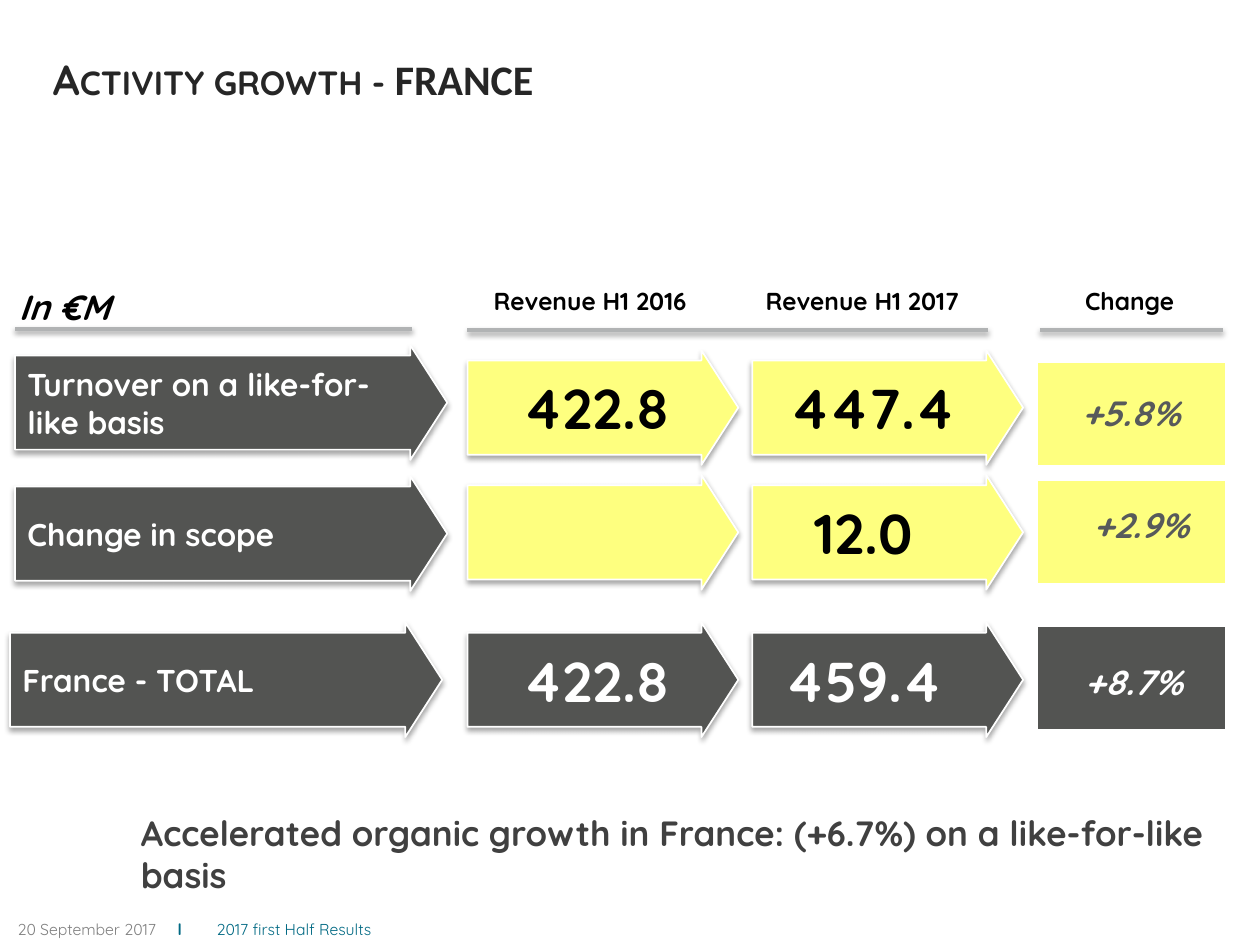
from dataclasses import dataclass

from lxml.etree import SubElement
from pptx import Presentation
from pptx.dml.color import RGBColor as Rgb
from pptx.enum.shapes import MSO_CONNECTOR as Link, MSO_SHAPE as Shape
from pptx.enum.text import MSO_ANCHOR as Anchor, PP_ALIGN as Align
from pptx.oxml.ns import qn
from pptx.util import Inches, Pt


@dataclass(frozen=True)
class Theme:
    """Colours, fonts and type sizes of the slide."""
    font: str = "Quicksand"
    alt: str = "Calibri"
    white: str = "FFFFFF"
    black: str = "000000"
    dark: str = "535452"
    yellow: str = "FEFF7F"
    rule: str = "B1B3B4"
    ink: str = "262626"
    body: str = "404040"
    rate: str = "575A5B"
    grey: str = "808080"
    teal: str = "006983"
    title: int = 24
    figure: int = 32
    large: int = 20
    label: int = 18
    head: int = 14
    foot: int = 9


T = Theme()
COLS = (3.71, 5.97)
ARROW_H = 0.91


def style(run, size, color, bold=True, italic=False, font=T.font):
    """Format one run."""
    face = run.font
    face.name, face.size = font, Pt(size)
    face.bold, face.italic = bold, italic
    face.color.rgb = Rgb.from_string(color)


def write(frame, text, size, color, align=Align.LEFT, italic=False):
    """Put one styled paragraph in a frame."""
    frame.word_wrap = True
    para = frame.paragraphs[0]
    para.text, para.alignment = text, align
    style(para.runs[0], size, color, italic=italic)


def label(slide, box, text, size, color, align=Align.CENTER, italic=False):
    """Add a text box."""
    shape = slide.shapes.add_textbox(*map(Inches, box))
    write(shape.text_frame, text, size, color, align, italic)


def shade(shape, alpha, dist):
    """Give a shape or line a soft shadow below it."""
    props = shape._element.spPr
    for old in props.findall(qn("a:effectLst")):
        props.remove(old)
    glow = SubElement(SubElement(props, qn("a:effectLst")), qn("a:outerShdw"),
                      blurRad=str(Pt(3.1)), dist=str(Pt(dist)),
                      dir="5400000", rotWithShape="0")
    tint = SubElement(glow, qn("a:srgbClr"), val=T.black)
    SubElement(tint, qn("a:alpha"), val=str(alpha * 1000))


def block(slide, kind, box, fill, width):
    """Add a filled shape with a white outline."""
    shape = slide.shapes.add_shape(kind, *map(Inches, box))
    shape.shadow.inherit = False
    shape.fill.solid()
    shape.fill.fore_color.rgb = Rgb.from_string(fill)
    shape.line.color.rgb = Rgb.from_string(T.white)
    shape.line.width = Pt(width)
    return shape


def arrow(slide, box, fill, text, size, color, align=Align.CENTER, shift=0):
    """Add a block arrow, its text moved sideways by shift."""
    shape = block(slide, Shape.RIGHT_ARROW, box, fill, 1)
    shape.adjustments[0], shape.adjustments[1] = 0.821, 0.322
    shade(shape, 35, 1.8)
    if text:
        frame = shape.text_frame
        frame.vertical_anchor = Anchor.MIDDLE
        frame.margin_left = Inches(0.1 + shift)
        frame.margin_right = Inches(0.1 - shift)
        write(frame, text, size, color, align)


def rule(slide, left, right, top):
    """Add a shaded line under a heading."""
    line = slide.shapes.add_connector(
        Link.STRAIGHT, *map(Inches, (left, top, right, top)))
    line.line.color.rgb = Rgb.from_string(T.rule)
    line.line.width = Pt(2)
    shade(line, 38, 1.6)


def title(slide, box):
    """Place and format the title."""
    shape = slide.shapes.title
    shape.left, shape.top, shape.width, shape.height = map(Inches, box)
    frame = shape.text_frame
    frame.margin_left = frame.margin_right = 0
    frame.margin_top = frame.margin_bottom = 0
    frame.vertical_anchor = Anchor.MIDDLE
    frame.word_wrap = True
    para = frame.paragraphs[0]
    para.alignment = Align.LEFT
    for text, font in (("Activity growth - ", T.font), ("FRANCE", T.alt)):
        run = para.add_run()
        run.text = text
        style(run, T.title, T.ink, font=font)
        run.font._element.set("cap", "small")


def heads(slide, top):
    """Add the column headings and their rules."""
    label(slide, (0.05, top, 3.51, 0.44), "In €M", T.large, T.black,
          Align.LEFT, True)
    for left, text in ((3.66, "Revenue H1 2016"), (5.82, "Revenue H1 2017"),
                       (7.94, "Change")):
        label(slide, (left, top, 2.05, 0.34), text, T.head, T.black)
    for left, right, drop in ((0.12, 3.27, 0.39), (3.71, 7.84, 0.4),
                              (8.25, 9.71, 0.4)):
        rule(slide, left, right, top + drop)


def row(slide, name, spot, top, cells, rate, box, total=False):
    """Add one row: name arrow, two figures and the rate."""
    fill, color, tone = ((T.dark, T.white, T.white) if total
                         else (T.yellow, T.black, T.rate))
    arrow(slide, (*spot, 3.43, ARROW_H), T.dark, name, T.label, T.white,
          Align.LEFT)
    for left, (text, shift) in zip(COLS, cells):
        arrow(slide, (left, top, 2.15, ARROW_H), fill, text, T.figure, color,
              shift=shift)
    tile, left, high = box
    block(slide, Shape.RECTANGLE, (8.23, tile, 1.5, 0.83), fill, 1.5)
    label(slide, (left, high, 2.05, 0.44), rate, T.large, tone, italic=True)


def footer(slide, box):
    """Add the date and report name, set apart by tabs."""
    frame = slide.shapes.add_textbox(*map(Inches, box)).text_frame
    frame.margin_left = frame.margin_right = 0
    frame.margin_top = frame.margin_bottom = 0
    frame.vertical_anchor = Anchor.MIDDLE
    frame.word_wrap = True
    para = frame.paragraphs[0]
    tabs = SubElement(para._p.get_or_add_pPr(), qn("a:tabLst"))
    for stop in (1.27, 1.58):
        SubElement(tabs, qn("a:tab"), pos=str(Inches(stop)), algn="l")
    for text, color, bold in (("20 September 2017\t", T.grey, False),
                              ("l\t", T.teal, True),
                              ("2017 first Half Results", T.teal, False)):
        run = para.add_run()
        run.text = text
        style(run, T.foot, color, bold)


def main():
    """Build and save the slide."""
    deck = Presentation()
    deck.slide_width, deck.slide_height = Inches(10), Inches(7.5)
    slide = deck.slides.add_slide(deck.slide_layouts[5])
    title(slide, (0.42, 0.13, 8.28, 0.99))
    heads(slide, 2.22)
    row(slide, "Turnover on a like-for-like basis", (0.12, 2.74), 2.78,
        (("422.8", 0.07), ("447.4", 0)), "+5.8%", (2.87, 7.95, 3.06))
    row(slide, "Change in scope", (0.12, 3.78), 3.77,
        (("", 0), ("12.0", -0.07)), "+2.9%", (3.81, 8.03, 3.95))
    row(slide, "France - TOTAL", (0.08, 4.94), 4.94,
        (("422.8", 0.07), ("459.4", -0.07)), "+8.7%", (4.97, 7.97, 5.19),
        True)
    label(slide, (1.02, 6.39, 8.64, 0.77),
          "Accelerated organic growth in France: (+6.7%) on a like-for-like "
          "basis", T.large, T.body, Align.LEFT)
    footer(slide, (0.14, 7.23, 4.96, 0.29))
    deck.save("out.pptx")


if __name__ == "__main__":
    main()
